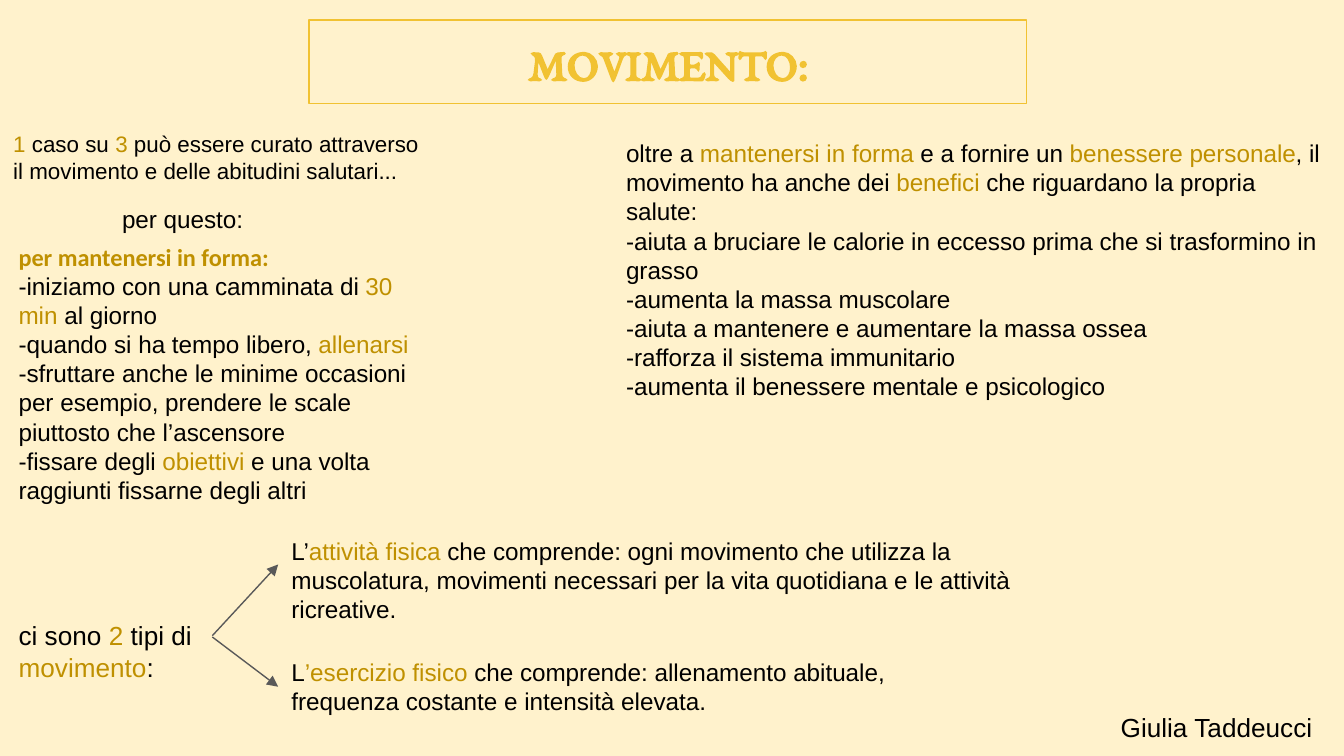
from lxml.etree import SubElement
from pptx import Presentation
from pptx.dml.color import RGBColor
from pptx.enum.shapes import MSO_CONNECTOR, MSO_SHAPE
from pptx.enum.text import MSO_ANCHOR, PP_ALIGN
from pptx.oxml.ns import qn
from pptx.util import Inches, Pt

CREAM, YELLOW, GOLD, BLACK, GREY = "FFF2CC", "F1C232", "BF9000", "000000", "595959"

TITLE = "MOVIMENTO:"
TITLE_PLACE = (2.3, 0.15, 5.34, 0.62)
HEADING = "per mantenersi in forma:"

# Place (left, top, width, height), text size, paragraphs; *words* are gold.
TEXTS = [
    ((8.24, 5.19, 1.76, 0.44), 14, ["Giulia Taddeucci"]),
    ((0, 0.87, 3.29, 0.73), 12, [
        "*1* caso su *3* può essere curato attraverso il movimento e delle abitudini salutari...",
    ]),
    ((0.04, 1.7, 3.2, 2.18), 13, [
        f"*{HEADING}*",
        "-iniziamo con una camminata di *30 min* al giorno",
        "-quando si ha tempo libero, *allenarsi*",
        "-sfruttare anche le minime occasioni per esempio, prendere le scale "
        "piuttosto che l’ascensore",
        "-fissare degli *obiettivi *e una volta raggiunti fissarne degli altri",
    ]),
    ((0.81, 1.42, 1.67, 0.42), 13, ["per questo:"]),
    ((0.04, 4.51, 1.67, 0.67), 14, ["ci sono *2* tipi di *movimento*:"]),
    ((2.07, 3.89, 5.67, 0.64), 13, [
        "L’*attività fisica* che comprende: ogni movimento che utilizza la muscolatura, "
        "movimenti necessari per la vita quotidiana e le attività ricreative.",
    ]),
    ((2.07, 4.79, 5.29, 0.64), 13, [
        "L*’esercizio fisico* che comprende: allenamento abituale, "
        "frequenza costante e intensità elevata.",
    ]),
    ((4.56, 0.93, 5.44, 2), 13, [
        "oltre a* mantenersi in forma *e a fornire un *benessere personale*, "
        "il movimento ha anche dei *benefici* che riguardano la propria salute:",
        "-aiuta a bruciare le calorie in eccesso prima che si trasformino in grasso",
        "-aumenta la massa muscolare",
        "-aiuta a mantenere e aumentare la massa ossea",
        "-rafforza il sistema immunitario",
        "-aumenta il benessere mentale e psicologico",
    ]),
]

ARROWS = [((1.58, 4.73), (2.07, 4.2)), ((1.58, 4.74), (2.07, 5.11))]


def color(value):
    return RGBColor.from_string(value)


def inches(values):
    return [Inches(value) for value in values]


def style(span, size, font, fill, bold=False):
    span.font.size = Pt(size)
    span.font.name = font
    span.font.bold = bold
    span.font.color.rgb = color(fill)


def set_margins(frame):
    frame.word_wrap = True
    frame.margin_left = frame.margin_right = Inches(0.1)
    frame.margin_top = frame.margin_bottom = Inches(0.1)


def add_title(page):
    box = page.shapes.add_shape(MSO_SHAPE.RECTANGLE, *inches(TITLE_PLACE))
    box.shadow.inherit = False
    box.fill.background()
    box.line.color.rgb = color(YELLOW)
    box.line.width = Pt(0.75)
    frame = box.text_frame
    set_margins(frame)
    frame.vertical_anchor = MSO_ANCHOR.MIDDLE
    frame.text = TITLE
    para = frame.paragraphs[0]
    para.alignment = PP_ALIGN.CENTER
    style(para.runs[0], 25, "EB Garamond", YELLOW, bold=True)


def add_text(page, place, size, lines):
    frame = page.shapes.add_textbox(*inches(place)).text_frame
    set_margins(frame)
    for number, line in enumerate(lines):
        para = frame.add_paragraph() if number else frame.paragraphs[0]
        for index, words in enumerate(line.split("*")):
            if not words:
                continue
            span = para.add_run()
            span.text = words
            heading = words == HEADING
            style(span, size, "Calibri" if heading else "Arial",
                  GOLD if index % 2 else BLACK, bold=heading)


def add_arrow(page, start, end):
    arrow = page.shapes.add_connector(MSO_CONNECTOR.STRAIGHT, *inches(start + end))
    arrow.line.color.rgb = color(GREY)
    arrow.line.width = Pt(0.75)
    properties = arrow._element.spPr
    SubElement(properties.find(qn("a:ln")), qn("a:tailEnd"), type="triangle")
    SubElement(properties, qn("a:effectLst"))


def main():
    deck = Presentation()
    deck.slide_width = Inches(10)
    deck.slide_height = Inches(10) * 9 // 16
    page = deck.slides.add_slide(deck.slide_layouts[6])
    page.background.fill.solid()
    page.background.fill.fore_color.rgb = color(CREAM)
    add_title(page)
    for place, size, lines in TEXTS:
        add_text(page, place, size, lines)
    for start, end in ARROWS:
        add_arrow(page, start, end)
    deck.save("out.pptx")


if __name__ == "__main__":
    main()
